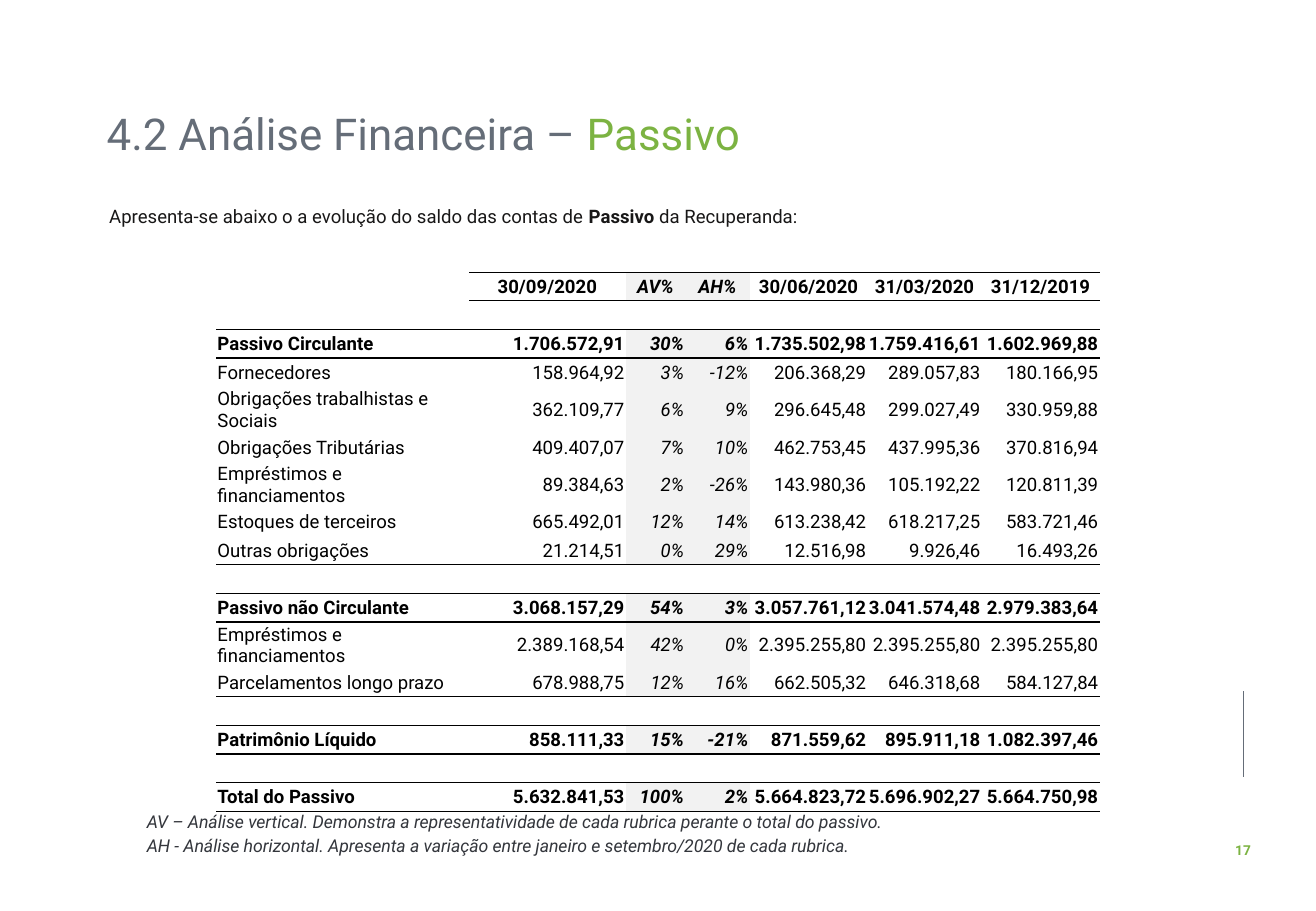
import pptx
import pptx.dml.color
import pptx.enum.shapes
import pptx.enum.text
import pptx.oxml
import pptx.oxml.ns
import pptx.util
from lxml import etree

Inches = pptx.util.Inches
Pt = pptx.util.Pt
RGBColor = pptx.dml.color.RGBColor
ALIGN = pptx.enum.text.PP_ALIGN
ANCHOR = pptx.enum.text.MSO_ANCHOR
qn = pptx.oxml.ns.qn

GREEN = RGBColor(0x7C, 0xB3, 0x42)
SLATE = RGBColor(0x65, 0x6D, 0x78)
INK = RGBColor(0x18, 0x17, 0x17)
NOTE = RGBColor(0x33, 0x36, 0x3C)
BLACK = RGBColor(0, 0, 0)
SHADE = RGBColor(0xF2, 0xF2, 0xF2)


def add_run(p, text, size, color, bold=False, italic=False):
    r = p.add_run()
    r.text = text
    r.font.name = "Roboto"
    r.font.size = Pt(size)
    r.font.color.rgb = color
    r.font.bold = bold
    r.font.italic = italic


def add_border(cell, side, width):
    ln = etree.SubElement(cell._tc.get_or_add_tcPr(), qn("a:" + side), w=str(Pt(width)))
    if width:
        fill = etree.SubElement(ln, qn("a:solidFill"))
        etree.SubElement(fill, qn("a:srgbClr"), val=str(BLACK))
    else:
        etree.SubElement(ln, qn("a:noFill"))


prs = pptx.Presentation()
prs.slide_width = Inches(10.83)
prs.slide_height = Inches(7.5)
s = prs.slides.add_slide(prs.slide_layouts[6])

line = s.shapes.add_connector(pptx.enum.shapes.MSO_CONNECTOR.STRAIGHT,
                              Inches(10.23), Inches(5.69), Inches(10.23), Inches(6.4))
line.line.color.rgb = SLATE
line.line.width = Pt(0.5)
etree.SubElement(line._element.spPr, qn("a:effectLst"))

tf = s.shapes.add_textbox(Inches(10.06), Inches(6.88), Inches(0.34), Inches(0.24)).text_frame
tf.word_wrap = False
p = tf.paragraphs[0]
p.alignment = ALIGN.CENTER
add_run(p, "17", 8.1, GREEN, bold=True)

tf = s.shapes.add_textbox(Inches(0.78), Inches(0.86), Inches(8.18), Inches(0.53)).text_frame
tf.word_wrap = True
tf.vertical_anchor = ANCHOR.MIDDLE
p = tf.paragraphs[0]
p.line_spacing = 0.9
add_run(p, "4.2 Análise Financeira – ", 26, SLATE)
add_run(p, "Passivo", 26, GREEN)

tf = s.shapes.add_textbox(Inches(0.8), Inches(1.55), Inches(8.7), Inches(0.35)).text_frame
tf.word_wrap = True
p = tf.paragraphs[0]
p.alignment = ALIGN.JUSTIFY
p.line_spacing = 1.5
add_run(p, "Apresenta-se abaixo o a evolução do saldo das contas de ", 11, INK)
add_run(p, "Passivo", 11, INK, bold=True)
add_run(p, " da Recuperanda:", 11, INK)

notes = [
    "AV – Análise vertical. Demonstra a representatividade de cada rubrica perante o total do passivo.",
    "AH - Análise horizontal. Apresenta a variação entre janeiro e setembro/2020 de cada rubrica.",
]
tf = s.shapes.add_textbox(Inches(0.8), Inches(6.6), Inches(8.7), Inches(0.49)).text_frame
tf.word_wrap = True
for i, note in enumerate(notes):
    p = tf.add_paragraph() if i else tf.paragraphs[0]
    p.alignment = ALIGN.JUSTIFY
    p.line_spacing = 1.14
    p._p.get_or_add_pPr().set("marL", str(Inches(0.31)))
    add_run(p, note, 10.5, NOTE, italic=True)

GAP = ("gap", [""] * 7)
rows = [
    ("header", ["", "30/09/2020", "AV%", "AH%", "30/06/2020", "31/03/2020", "31/12/2019"]),
    GAP,
    ("total", ["Passivo Circulante", "1.706.572,91", "30%", "6%", "1.735.502,98", "1.759.416,61", "1.602.969,88"]),
    ("item", ["Fornecedores", "158.964,92", "3%", "-12%", "206.368,29", "289.057,83", "180.166,95"]),
    ("item", ["Obrigações trabalhistas e Sociais", "362.109,77", "6%", "9%", "296.645,48", "299.027,49", "330.959,88"]),
    ("item", ["Obrigações Tributárias", "409.407,07", "7%", "10%", "462.753,45", "437.995,36", "370.816,94"]),
    ("item", ["Empréstimos e financiamentos", "89.384,63", "2%", "-26%", "143.980,36", "105.192,22", "120.811,39"]),
    ("item", ["Estoques de terceiros", "665.492,01", "12%", "14%", "613.238,42", "618.217,25", "583.721,46"]),
    ("item", ["Outras obrigações", "21.214,51", "0%", "29%", "12.516,98", "9.926,46", "16.493,26"]),
    GAP,
    ("total", ["Passivo não Circulante", "3.068.157,29", "54%", "3%", "3.057.761,12", "3.041.574,48", "2.979.383,64"]),
    ("item", ["Empréstimos e financiamentos", "2.389.168,54", "42%", "0%", "2.395.255,80", "2.395.255,80", "2.395.255,80"]),
    ("item", ["Parcelamentos longo prazo", "678.988,75", "12%", "16%", "662.505,32", "646.318,68", "584.127,84"]),
    GAP,
    ("total", ["Patrimônio Líquido", "858.111,33", "15%", "-21%", "871.559,62", "895.911,18", "1.082.397,46"]),
    GAP,
    ("total", ["Total do Passivo", "5.632.841,53", "100%", "2%", "5.664.823,72", "5.696.902,27", "5.664.750,98"]),
]
col_widths = [2.08, 1.29, 0.49, 0.53, 0.97, 0.94, 0.97]

kinds = ["item"] + [kind for kind, _ in rows] + ["item"]
rules = []
for above, below in zip(kinds, kinds[1:]):
    if above == "total":
        rules.append(1)
    else:
        rules.append(0 if above == below == "item" else 0.5)

table = s.shapes.add_table(len(rows), len(col_widths), Inches(1.78), Inches(2.24),
                           Inches(7.27), Inches(4.02)).table
table.first_row = False
table.horz_banding = False
for c, width in enumerate(col_widths):
    table.columns[c].width = Inches(width)

for i, (kind, values) in enumerate(rows):
    table.rows[i].height = Inches(4.02 / len(rows))
    for c, value in enumerate(values):
        cell = table.cell(i, c)
        cell.vertical_anchor = ANCHOR.MIDDLE
        cell.margin_left = cell.margin_right = cell.margin_top = Inches(0.01)
        cell.margin_bottom = 0
        top, bottom = rules[i], rules[i + 1]
        if c == 0 and i < 2:
            top = 0
            bottom = bottom if i else 0
        for side, width in [("lnL", 0), ("lnR", 0), ("lnT", top), ("lnB", bottom)]:
            add_border(cell, side, width)
        percent = c in (2, 3)
        if percent and kind != "gap":
            cell.fill.solid()
            cell.fill.fore_color.rgb = SHADE
        else:
            cell.fill.background()
        p = cell.text_frame.paragraphs[0]
        if not value:
            etree.SubElement(p._p, qn("a:endParaRPr"), sz="1100")
            continue
        if kind == "header":
            p.alignment = ALIGN.CENTER
        else:
            p.alignment = ALIGN.RIGHT if c else ALIGN.LEFT
        add_run(p, value, 11, BLACK, bold=kind != "item", italic=percent)

prs.save("out.pptx")
